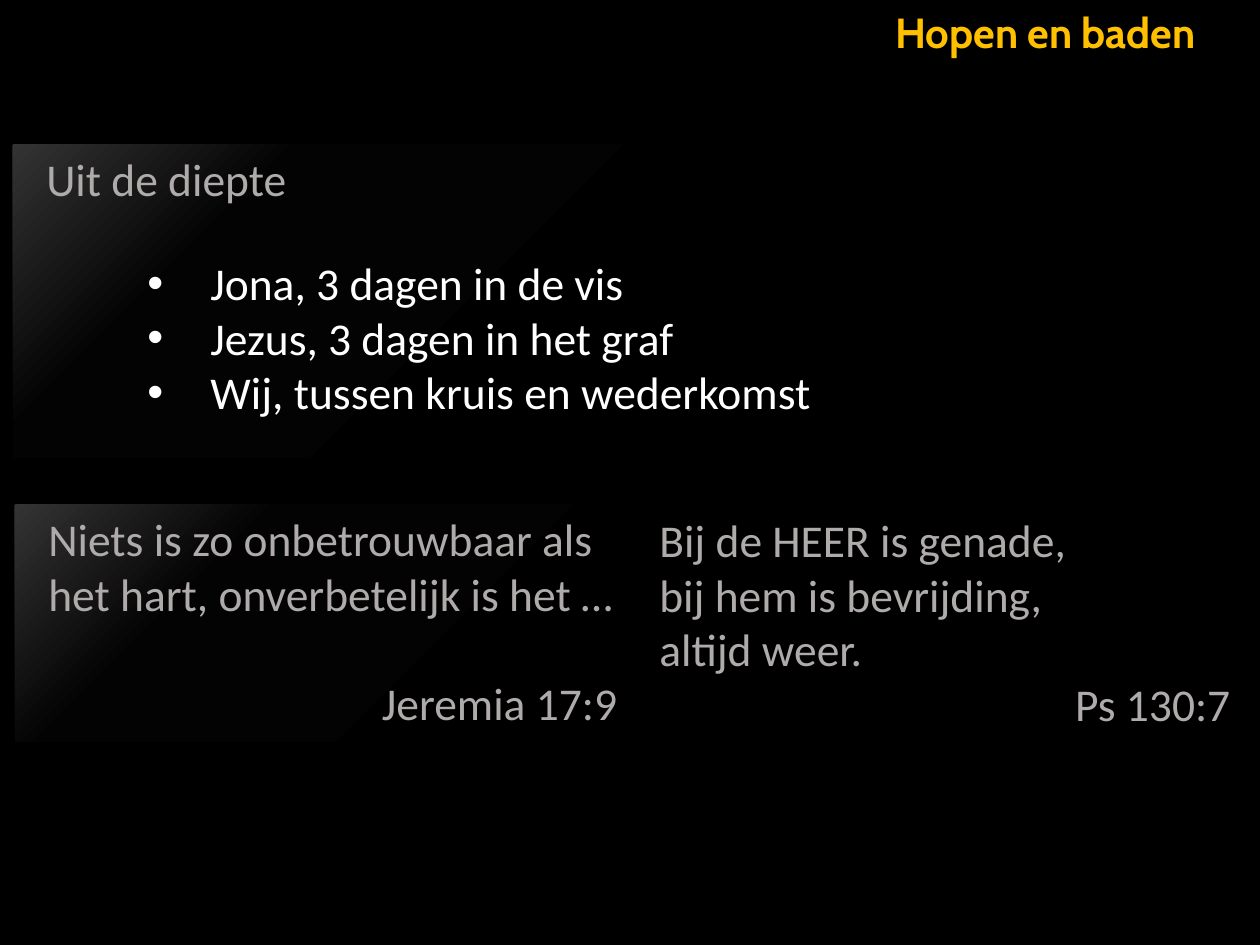
from lxml import etree
from pptx import Presentation
from pptx.dml.color import RGBColor
from pptx.enum.shapes import MSO_SHAPE
from pptx.enum.text import MSO_ANCHOR, PP_ALIGN
from pptx.oxml.ns import qn
from pptx.util import Emu, Pt

PX = 914400 / 126
RECTANGLE = MSO_SHAPE.RECTANGLE
TOP = MSO_ANCHOR.TOP
LEFT, RIGHT = PP_ALIGN.LEFT, PP_ALIGN.RIGHT
COLORS = {
    "background": "000000",
    "title": "FFC000",
    "quiet": "AFABAB",
    "bright": "FFFFFF",
    "panel_middle": "030303",
    "panel_light": "333333",
}
TEXT_INDENT = 21
BULLET_INDENT = 63
BLANK_LINE = 31


def emu(pixels):
    return Emu(round(pixels * PX))


def rgb(name):
    return RGBColor.from_string(COLORS[name])


def add_text_box(slide, box):
    return slide.shapes.add_textbox(*map(emu, box))


def add_panel(slide, box):
    panel = slide.shapes.add_shape(RECTANGLE, *map(emu, box))
    panel.shadow.inherit = False
    panel.line.fill.background()
    panel.fill.gradient()
    gradient = panel.fill._xPr.find(qn("a:gradFill"))
    stops = gradient.find(qn("a:gsLst"))
    for stop in list(stops):
        stops.remove(stop)
    for position, name in ((0, "background"), (69, "panel_middle"), (100, "panel_light")):
        stop = etree.SubElement(stops, qn("a:gs"), pos=str(position * 1000))
        etree.SubElement(stop, qn("a:srgbClr"), val=COLORS[name])
    gradient.find(qn("a:lin")).set("ang", str(225 * 60000))
    return panel


def write_paragraph(shape, text, color, size=26, font="Calibri", bold=False,
                    align=LEFT, indent=0, space_before=0, bullet=False):
    frame = shape.text_frame
    frame.word_wrap = True
    frame.vertical_anchor = TOP
    paragraph = frame.paragraphs[0]
    if paragraph.runs:
        paragraph = frame.add_paragraph()
    paragraph.alignment = align
    paragraph.space_before = Pt(space_before)
    run = paragraph.add_run()
    run.text = text
    run.font.name = font
    run.font.size = Pt(size)
    run.font.bold = bold
    run.font.color.rgb = rgb(color)
    properties = paragraph._p.get_or_add_pPr()
    properties.set("marL", str(emu(indent)))
    if bullet:
        properties.set("indent", str(-emu(indent)))
        etree.SubElement(properties, qn("a:buFont"), typeface="Arial")
        etree.SubElement(properties, qn("a:buChar"), char="•")


def add_title(slide, box):
    title = add_text_box(slide, box)
    write_paragraph(title, "Hopen en baden", "title", size=24, font="Cabin", bold=True)


def add_depth_section(slide, box):
    left, top, width, height = box
    panel = add_panel(slide, box)
    write_paragraph(panel, "Uit de diepte", "quiet", indent=TEXT_INDENT)
    bullets = add_text_box(slide, (left + 122, top + 104, 890, 233))
    for text in ("Jona, 3 dagen in de vis",
                 "Jezus, 3 dagen in het graf",
                 "Wij, tussen kruis en wederkomst"):
        write_paragraph(bullets, text, "bright", indent=BULLET_INDENT, bullet=True)


def add_quote(shape, lines, reference, space_before=0):
    for line in lines:
        write_paragraph(shape, line, "quiet", indent=TEXT_INDENT)
    write_paragraph(shape, reference, "quiet", align=RIGHT, space_before=space_before)


def add_quotes(slide, box):
    left, top, width, height = box
    psalm = add_text_box(slide, (left + 611, top + 1, 617, height))
    add_quote(psalm, ("Bij de HEER is genade,", "bij hem is bevrijding,", "altijd weer."),
              "Ps 130:7")
    jeremiah = add_panel(slide, (left, top, 615, height))
    add_quote(jeremiah, ("Niets is zo onbetrouwbaar als", "het hart, onverbetelijk is het …"),
              "Jeremia 17:9", BLANK_LINE)


def main():
    presentation = Presentation()
    presentation.slide_width = emu(1260)
    presentation.slide_height = emu(945)
    slide = presentation.slides.add_slide(presentation.slide_layouts[6])
    slide.background.fill.solid()
    slide.background.fill.fore_color.rgb = rgb("background")
    add_title(slide, (883, 0, 377, 63))
    add_depth_section(slide, (13, 145, 617, 313))
    add_quotes(slide, (15, 505, 1228, 237))
    presentation.save("out.pptx")


if __name__ == "__main__":
    main()
